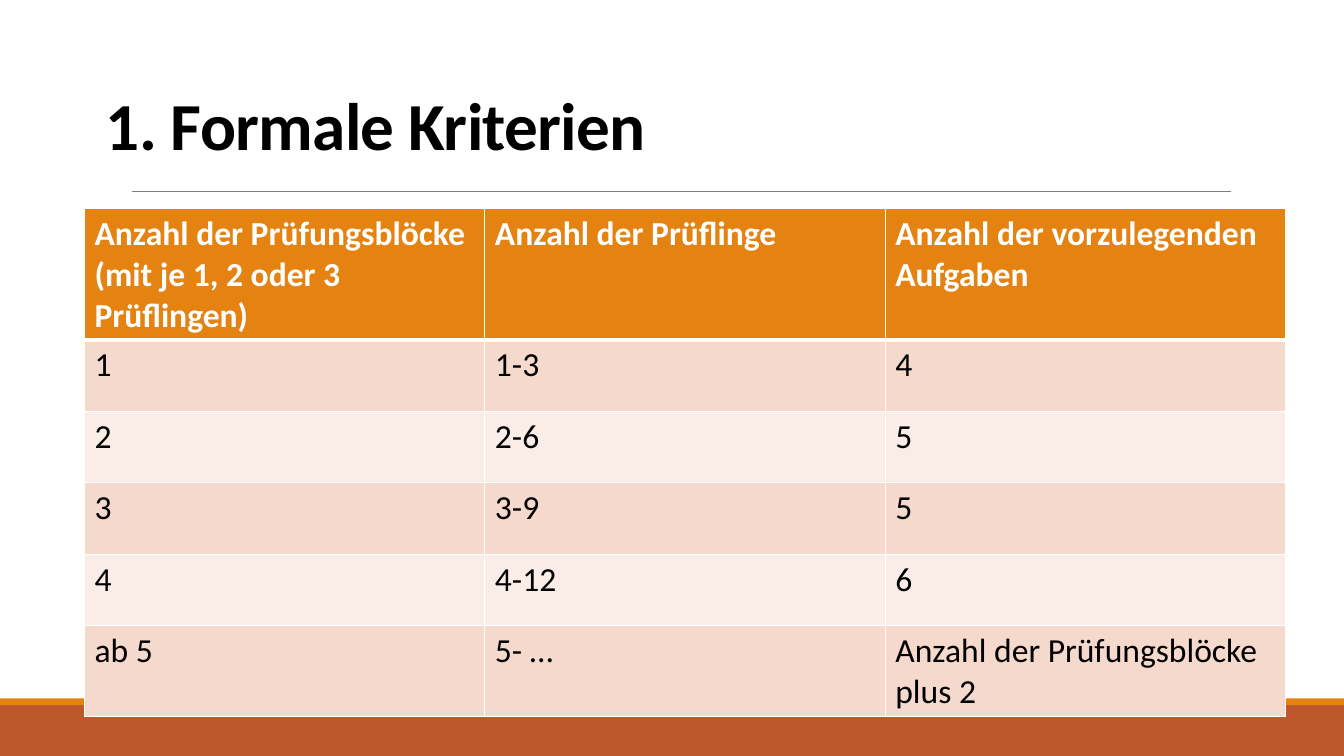
from lxml import etree
from pptx import Presentation
from pptx import util as u
from pptx.dml.color import RGBColor
from pptx.enum import shapes, text
from pptx.oxml import ns

FONT = "Calibri"
COLORS = {
    "rust": "BD582C", "orange": "E48312", "rule": "808080",
    "odd": "F5D9CC", "even": "FAEDE7", "white": "FFFFFF", "black": "000000",
}
ROWS = [
    ("Anzahl der Prüfungsblöcke (mit je 1, 2 oder 3 Prüflingen)",
     "Anzahl der Prüflinge", "Anzahl der vorzulegenden Aufgaben"),
    ("1", "1-3", "4"),
    ("2", "2-6", "5"),
    ("3", "3-9", "5"),
    ("4", "4-12", "6"),
    ("ab 5", "5- …", "Anzahl der Prüfungsblöcke plus 2"),
]


def rgb(name):
    return RGBColor.from_string(COLORS[name])


def style(p, size, color, bold):
    p.font.name, p.font.size, p.font.bold = FONT, u.Pt(size), bold
    p.font.color.rgb = rgb(color)


def add_band(s, x, y, w, h, color):
    sp = s.shapes.add_shape(shapes.MSO_SHAPE.RECTANGLE,
                            u.Cm(x), u.Cm(y), u.Cm(w), u.Cm(h))
    sp.shadow.inherit = False
    sp.fill.solid()
    sp.fill.fore_color.rgb = rgb(color)
    sp.line.fill.background()


def add_footer(s, x, y, w, h):
    """Thin orange stripe on top of a rust band."""
    stripe = 0.17
    add_band(s, x, y + stripe, w, h - stripe, "rust")
    add_band(s, x, y, w, stripe, "orange")


def add_rule(s, x, y, w):
    line = s.shapes.add_connector(shapes.MSO_CONNECTOR.STRAIGHT,
                                  u.Cm(x), u.Cm(y), u.Cm(x + w), u.Cm(y))
    line.line.color.rgb = rgb("rule")
    line.line.width = u.Pt(0.5)
    etree.SubElement(line._element.spPr, ns.qn("a:effectLst"))


def add_title(s, x, y, w, h, title):
    tf = s.shapes.add_textbox(u.Cm(x), u.Cm(y), u.Cm(w), u.Cm(h)).text_frame
    tf.word_wrap = True
    tf.vertical_anchor = text.MSO_ANCHOR.BOTTOM
    p = tf.paragraphs[0]
    p.line_spacing = 0.85
    r = p.add_run()
    r.text = title
    style(p, 48, "black", True)
    r.font._element.set("spc", "-50")


def set_borders(cell, widths):
    """Draw white borders; widths maps a side (L, R, T, B) to points."""
    tc_pr = cell._tc.get_or_add_tcPr()
    for i, (side, width) in enumerate(widths.items()):
        ln = etree.Element(ns.qn(f"a:ln{side}"), w=str(u.Pt(width)))
        fill = etree.SubElement(ln, ns.qn("a:solidFill"))
        etree.SubElement(fill, ns.qn("a:srgbClr"), val=COLORS["white"])
        tc_pr.insert(i, ln)


def add_criteria_table(s, x, y, w, h, rows):
    table = s.shapes.add_table(len(rows), len(rows[0]),
                               u.Cm(x), u.Cm(y), u.Cm(w), u.Cm(h)).table
    for i, row in enumerate(rows):
        header = i == 0
        fill = "orange" if header else "odd" if i % 2 else "even"
        for j, value in enumerate(row):
            cell = table.cell(i, j)
            cell.text = value
            style(cell.text_frame.paragraphs[0], 24,
                  "white" if header else "black", header)
            cell.fill.solid()
            cell.fill.fore_color.rgb = rgb(fill)
            set_borders(cell, {"L": 1, "R": 1, "T": 3 if i == 1 else 1,
                               "B": 3 if header else 1})


def main():
    prs = Presentation()
    prs.slide_width, prs.slide_height = u.Cm(33.87), u.Cm(19.05)
    s = prs.slides.add_slide(prs.slide_layouts[6])
    add_footer(s, 0, 17.6, 33.87, 1.45)
    add_rule(s, 3.33, 4.82, 27.68)
    add_title(s, 2.42, 1.9, 29.2, 2.37, "1. Formale Kriterien")
    add_criteria_table(s, 2.13, 5.26, 30.27, 10.8, ROWS)
    prs.save("out.pptx")


if __name__ == "__main__":
    main()
